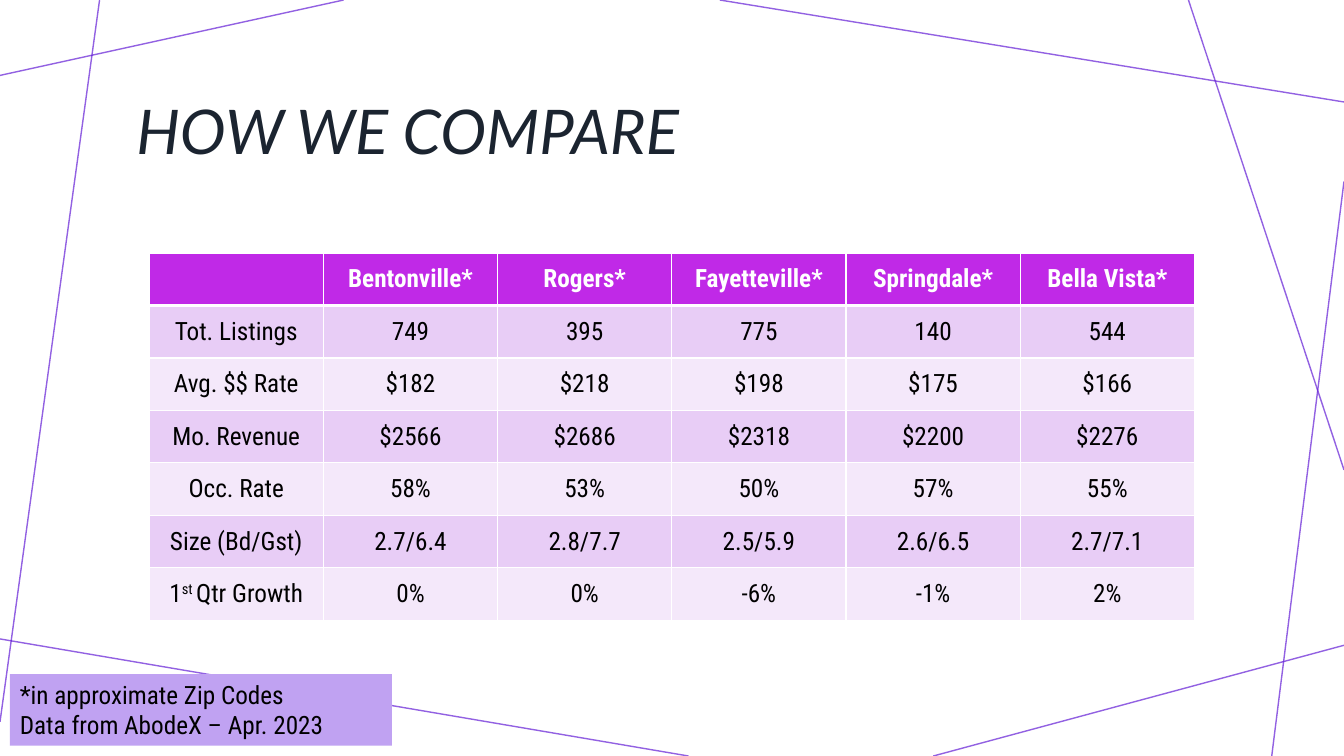
import dataclasses

import lxml.etree
import pptx
import pptx.dml.color
import pptx.enum.shapes
import pptx.enum.text
import pptx.oxml.ns
import pptx.util

Cm = pptx.util.Cm
Pt = pptx.util.Pt
qn = pptx.oxml.ns.qn
ALIGN = pptx.enum.text.PP_ALIGN
MIDDLE = pptx.enum.text.MSO_ANCHOR.MIDDLE


@dataclasses.dataclass(frozen=True)
class Theme:
    heading_font: str = "Lato"
    body_font: str = "Roboto Condensed"
    title_size: int = 44
    body_size: int = 18
    title: str = "1B2430"
    text: str = "000000"
    white: str = "FFFFFF"
    line: str = "641ED6"
    line_opacity: int = 70
    header: str = "C029E7"
    bands: tuple = ("E8CDF6", "F4E8FA")
    note: str = "C0A2F2"
    thin: int = 1
    thick: int = 3


def rgb(value):
    return pptx.dml.color.RGBColor.from_string(value)


def paint(fill, color):
    fill.solid()
    fill.fore_color.rgb = rgb(color)


class Page:
    def __init__(self, deck, theme):
        self.theme = theme
        self.slide = deck.slides.add_slide(deck.slide_layouts[5])
        paint(self.slide.background.fill, theme.white)

    def add_span(self, para, text, color, superscript=False, **formats):
        span = para.add_run()
        span.text = text
        formats = {"name": self.theme.body_font, "size": Pt(self.theme.body_size),
                   "bold": False, **formats}
        for name, value in formats.items():
            setattr(span.font, name, value)
        span.font.color.rgb = rgb(color)
        if superscript:
            span._r.get_or_add_rPr().set("baseline", "30000")

    def title(self, text, box):
        theme = self.theme
        title = self.slide.shapes.title
        title.left, title.top, title.width, title.height = map(Cm, box)
        frame = title.text_frame
        formats = {"vertical_anchor": MIDDLE, "word_wrap": True,
                   "auto_size": pptx.enum.text.MSO_AUTO_SIZE.NONE}
        for name, value in formats.items():
            setattr(frame, name, value)
        para = frame.paragraphs[0]
        para.alignment, para.line_spacing = ALIGN.LEFT, 0.9
        self.add_span(para, text, theme.title, name=theme.heading_font,
                      size=Pt(theme.title_size), italic=True)

    def line(self, *ends):
        theme = self.theme
        line = self.slide.shapes.add_connector(
            pptx.enum.shapes.MSO_CONNECTOR.STRAIGHT, *map(Cm, ends))
        line.line.width = Pt(theme.thin)
        paint(line.line.fill, theme.line)
        properties = line._element.spPr
        color = properties.find(".//" + qn("a:srgbClr"))
        lxml.etree.SubElement(color, qn("a:alpha"), val=str(theme.line_opacity * 1000))
        lxml.etree.SubElement(properties, qn("a:effectLst"))

    def note(self, lines, box):
        note = self.slide.shapes.add_shape(
            pptx.enum.shapes.MSO_SHAPE.RECTANGLE, *map(Cm, box))
        note.shadow.inherit = False
        paint(note.fill, self.theme.note)
        note.line.fill.background()
        frame = note.text_frame
        frame.word_wrap, frame.vertical_anchor = True, pptx.enum.text.MSO_ANCHOR.TOP
        for index, text in enumerate(lines):
            para = frame.add_paragraph() if index else frame.paragraphs[0]
            para.alignment = ALIGN.LEFT
            self.add_span(para, text, self.theme.text)

    def borders(self, cell, **widths):
        """Draw the cell's edges; widths in points by side: L, R, T, B."""
        properties = cell._tc.get_or_add_tcPr()
        for index, side in enumerate("LRTB"):
            width = Pt(widths.get(side, self.theme.thin))
            edge = lxml.etree.Element(qn("a:ln" + side), w=str(int(width)))
            fill = lxml.etree.SubElement(edge, qn("a:solidFill"))
            lxml.etree.SubElement(fill, qn("a:srgbClr"), val=self.theme.white)
            properties.insert(index, edge)

    def table(self, rows, box):
        """Draw a header row and banded rows; a tuple is (text, superscript, text)."""
        theme = self.theme
        table = self.slide.shapes.add_table(
            len(rows), len(rows[0]), *map(Cm, box)).table
        heavy = {0: {"B": theme.thick}, 1: {"T": theme.thick}}
        for i, row in enumerate(rows):
            for j, content in enumerate(row):
                cell = table.cell(i, j)
                cell.vertical_anchor = MIDDLE
                paint(cell.fill, theme.bands[(i - 1) % 2] if i else theme.header)
                self.borders(cell, **heavy.get(i, {}))
                para = cell.text_frame.paragraphs[0]
                para.alignment = ALIGN.CENTER
                parts = content if isinstance(content, tuple) else (content,)
                for k, text in enumerate(parts):
                    if text:
                        self.add_span(para, text, theme.text if i else theme.white,
                                      superscript=k == 1, bold=i == 0)


LINES = [
    (8.66, 0, 0, 1.9),
    (2.51, 0, 0, 18.19),
    (17.35, 19.05, 0, 16.1),
    (33.87, 16.26, 23.52, 19.05),
    (33.87, 4.57, 32.05, 19.05),
    (33.87, 11.84, 29.95, 0),
    (33.87, 2.57, 18.14, 0),
]
COMPARISON = [
    ["", "Bentonville*", "Rogers*", "Fayetteville*", "Springdale*", "Bella Vista*"],
    ["Tot. Listings", "749", "395", "775", "140", "544"],
    ["Avg. $$ Rate", "$182", "$218", "$198", "$175", "$166"],
    ["Mo. Revenue", "$2566", "$2686", "$2318", "$2200", "$2276"],
    ["Occ. Rate", "58%", "53%", "50%", "57%", "55%"],
    ["Size (Bd/Gst)", "2.7/6.4", "2.8/7.7", "2.5/5.9", "2.6/6.5", "2.7/7.1"],
    [("1", "st ", "Qtr Growth"), "0%", "0%", "-6%", "-1%", "2%"],
]


def main():
    deck = pptx.Presentation()
    deck.slide_width, deck.slide_height = Cm(33.87), Cm(19.05)
    page = Page(deck, Theme())
    for ends in LINES:
        page.line(*ends)
    page.table(COMPARISON, (3.76, 6.38, 26.34, 9.25))
    page.title("HOW WE COMPARE", (3.18, 1.47, 27.5, 3.84))
    page.note(["*in approximate Zip Codes", "Data from AbodeX – Apr. 2023"],
              (0.25, 16.99, 9.63, 1.8))
    deck.save("out.pptx")


if __name__ == "__main__":
    main()
